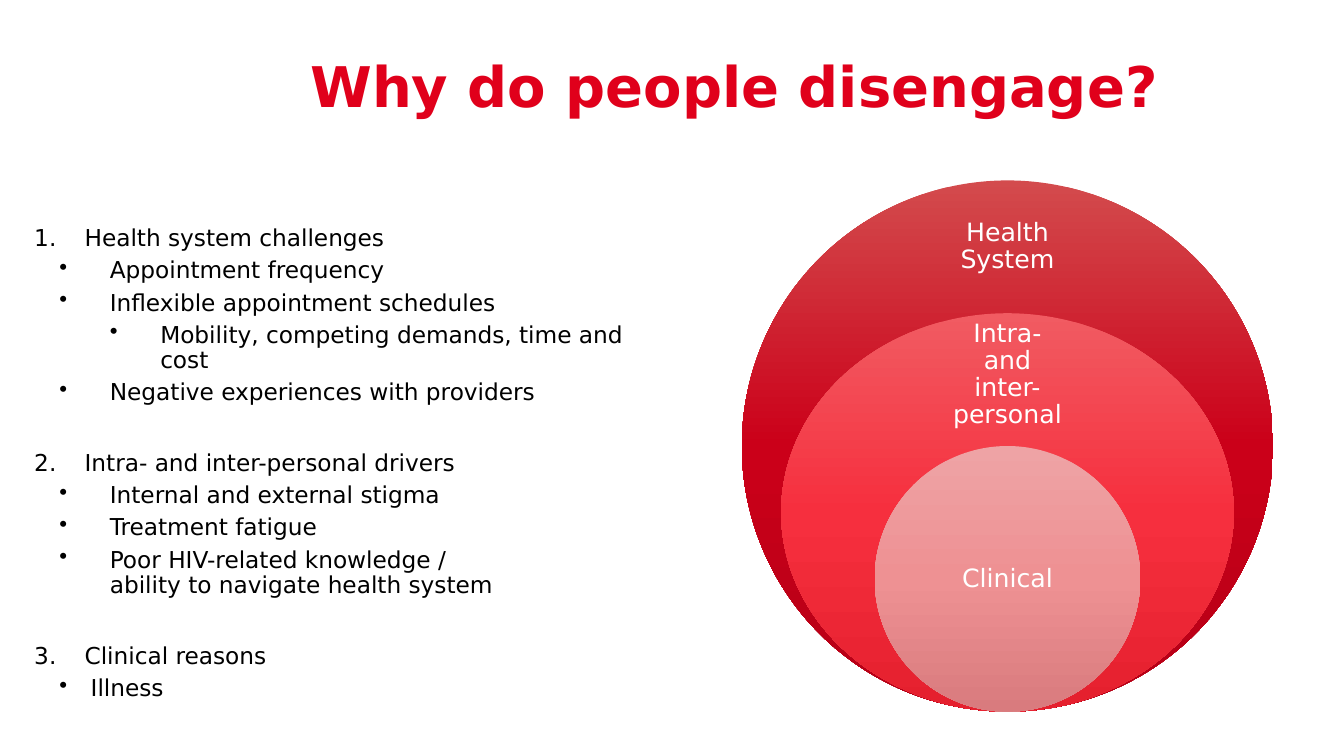
import copy
import pptx
import pptx.util
import pptx.dml.color
import pptx.enum.shapes
import pptx.enum.text
import pptx.oxml.ns
import lxml.etree

RGBColor = pptx.dml.color.RGBColor
RED = RGBColor(0xE0, 0x00, 0x1B)
BLACK = RGBColor(0x00, 0x00, 0x00)
WHITE = RGBColor(0xFF, 0xFF, 0xFF)
DARK = (RGBColor(0xD3, 0x4B, 0x4D), RGBColor(0xCB, 0x00, 0x19), RGBColor(0xB5, 0x00, 0x16))
BRIGHT = (RGBColor(0xF1, 0x5B, 0x62), RGBColor(0xF6, 0x2F, 0x3E), RGBColor(0xE5, 0x20, 0x2E))
PALE = (RGBColor(0xEE, 0xA3, 0xA5), RGBColor(0xEE, 0x91, 0x93), RGBColor(0xD9, 0x7B, 0x7E))

FONT = "DejaVu Sans"
COLS, ROWS = 80, 45
LEFT = pptx.enum.text.PP_ALIGN.LEFT
CENTER = pptx.enum.text.PP_ALIGN.CENTER
TOP = pptx.enum.text.MSO_ANCHOR.TOP
MIDDLE = pptx.enum.text.MSO_ANCHOR.MIDDLE
qn = pptx.oxml.ns.qn

CENTRE, BASE, SIZE = 59.97, 42.36, 31.62
RINGS = [
    ("Health System", SIZE, 1, DARK, (14.7, 7.8, 3.36)),
    ("Intra- and inter-personal", 26.94, 0.75, BRIGHT, (22.32, 8.88, 3.12)),
    ("Clinical", SIZE / 2, 0.5, PALE, (34.47, 7.92, 5.58)),
]

NUMBER, POINT, DETAIL, SHORT = (0, 0.5, 0.5), (1, 0.75, 0.5), (2, 1.25, 0.5), (1, 0.56, 0.31)
REASONS = [
    (NUMBER, "Health system challenges"),
    (POINT, "Appointment frequency"),
    (POINT, "Inflexible appointment schedules"),
    (DETAIL, "Mobility, competing demands, time and cost"),
    (POINT, "Negative experiences with providers"),
    (NUMBER, "Intra- and inter-personal drivers"),
    (POINT, "Internal and external stigma"),
    (POINT, "Treatment fatigue"),
    (POINT, "Poor HIV-related knowledge /\vability to navigate health system"),
    (NUMBER, "Clinical reasons"),
    (SHORT, "Illness"),
]


def write(para, text, size=18, color=BLACK, bold=False, align=LEFT, before=0):
    para.text = text
    para.alignment = align
    para.line_spacing = 0.9
    para.space_before = pptx.util.Pt(before)
    for run in para.runs:
        run.font.name = FONT
        run.font.size = pptx.util.Pt(size)
        run.font.bold = bold
        run.font.color.rgb = color
    for gap in para._p.findall(qn("a:br")):
        gap.append(copy.deepcopy(para.runs[0]._r.rPr))


class Deck:
    def __init__(self):
        self.file = pptx.Presentation()
        self.file.slide_width = pptx.util.Inches(13.33)
        self.file.slide_height = pptx.util.Inches(7.5)
        self.slide = self.file.slides.add_slide(self.file.slide_layouts[6])

    def place(self, left, top, width, height):
        col = self.file.slide_width / COLS
        row = self.file.slide_height / ROWS
        return int(left * col), int(top * row), int(width * col), int(height * row)

    def frame(self, area, anchor=MIDDLE, inset=0):
        frame = self.slide.shapes.add_textbox(*self.place(*area)).text_frame
        frame.word_wrap = True
        frame.vertical_anchor = anchor
        frame.margin_left = frame.margin_right = pptx.util.Inches(inset)
        frame.margin_top = frame.margin_bottom = pptx.util.Inches(inset)
        return frame

    def label(self, text, area, inset=0, **style):
        write(self.frame(area, inset=inset).paragraphs[0], text, **style)

    def ring(self, area, colors):
        oval = pptx.enum.shapes.MSO_SHAPE.OVAL
        shape = self.slide.shapes.add_shape(oval, *self.place(*area))
        shape.shadow.inherit = False
        shape.line.fill.background()
        shape.fill.gradient()
        shape.fill.gradient_angle = 270
        stops = shape._element.spPr.find(".//" + qn("a:gsLst"))
        stops.insert(1, copy.deepcopy(stops[0]))
        for i, (stop, color) in enumerate(zip(shape.fill.gradient_stops, colors)):
            stop.position = i / 2
            stop.color.rgb = color

    def outline(self, items, area, **style):
        frame = self.frame(area, anchor=TOP)
        for i, ((level, indent, hang), text) in enumerate(items):
            para = frame.add_paragraph() if i else frame.paragraphs[0]
            props = para._p.get_or_add_pPr()
            props.set("marL", str(pptx.util.Inches(indent)))
            props.set("indent", str(-pptx.util.Inches(hang)))
            if level:
                lxml.etree.SubElement(props, qn("a:buChar")).set("char", "•")
            else:
                lxml.etree.SubElement(props, qn("a:buAutoNum")).set("type", "arabicPeriod")
            para.level = level
            before = 0 if i == 0 else 5 if level else 33
            write(para, text, before=before, **style)


def main():
    deck = Deck()
    deck.label("Why do people disengage?", (18.48, 1.32, 59.46, 8.04), size=40, color=RED, bold=True)
    deck.outline(REASONS, (2.04, 13.5, 36.96, 30.12), size=16.6)
    for text, width, share, colors, (mid, wide, high) in RINGS:
        tall = SIZE * share
        deck.ring((CENTRE - width / 2, BASE - tall, width, tall), colors)
        area = (CENTRE - wide / 2, mid - high / 2, wide, high)
        deck.label(text, area, inset=0.14, color=WHITE, align=CENTER)
    deck.file.save("out.pptx")


if __name__ == "__main__":
    main()
